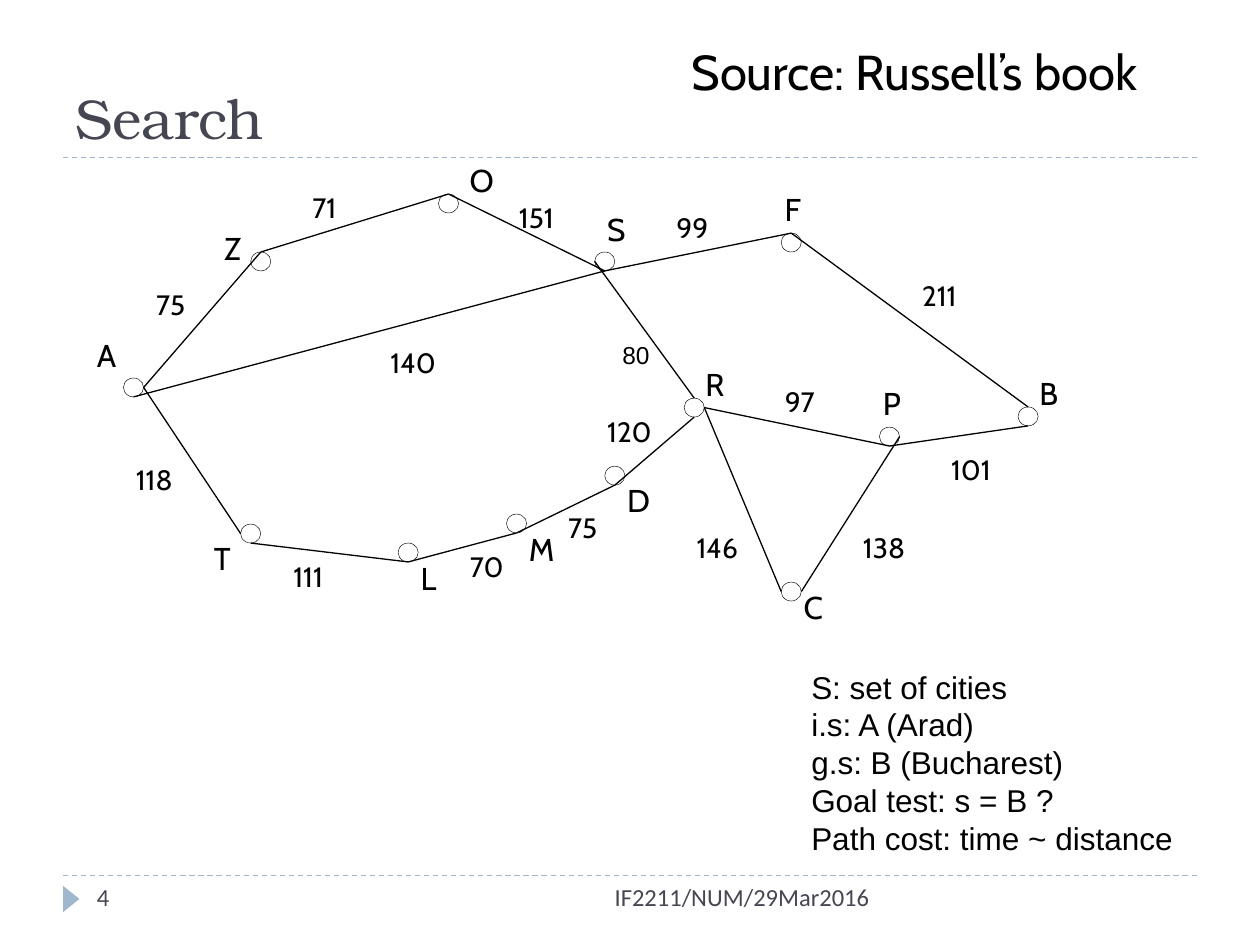
from typing import NamedTuple

import pptx
import pptx.dml.color
import pptx.enum.dml
import pptx.enum.shapes
import pptx.enum.text
import pptx.util
from lxml import etree

Inches = pptx.util.Inches
SHAPE = pptx.enum.shapes.MSO_SHAPE
ALIGN = pptx.enum.text.PP_ALIGN

COLORS = {"ink": "000000", "slate": "464653", "sky": "9FB8CD"}
DOT_W, DOT_H = 0.16, 0.15
# Points on a dot's rim, as shares of its width and height
SIDES = {"n": (0.5, 0), "e": (1, 0.5), "s": (0.5, 1), "w": (0, 0.5)}


class City(NamedTuple):
    x: float
    y: float
    text_x: float
    text_y: float


class Road(NamedTuple):
    start: str
    start_side: str
    end: str
    end_side: str
    cost: int
    text_x: float
    text_y: float


class Style(NamedTuple):
    font: str
    size: int
    color: str = "ink"


CITIES = {
    "A": City(0.98, 3.00, 0.67, 2.62),
    "T": City(1.91, 4.16, 1.60, 4.23),
    "R": City(5.43, 3.16, 5.50, 2.85),
    "C": City(6.20, 4.62, 6.28, 4.62),
    "P": City(6.98, 3.39, 6.91, 3.00),
    "B": City(8.08, 3.23, 8.15, 2.92),
    "F": City(6.20, 1.85, 6.13, 1.46),
    "S": City(4.72, 2.00, 4.72, 1.62),
    "O": City(3.48, 1.54, 3.63, 1.23),
    "Z": City(1.99, 2.00, 1.68, 1.77),
    "D": City(4.80, 3.70, 4.88, 3.77),
    "M": City(4.02, 4.08, 4.10, 4.16),
    "L": City(3.16, 4.31, 3.24, 4.39),
}

ROADS = [
    Road("A", "e", "Z", "n", 75, 1.14, 2.23),
    Road("Z", "n", "O", "n", 71, 2.38, 1.46),
    Road("O", "n", "S", "s", 151, 4.02, 1.54),
    Road("A", "s", "S", "s", 140, 3.00, 2.69),
    Road("P", "s", "B", "s", 101, 7.45, 3.54),
    Road("R", "e", "P", "s", 97, 6.13, 3.00),
    Road("C", "e", "P", "e", 138, 6.75, 4.16),
    Road("C", "w", "R", "e", 146, 5.43, 4.16),
    Road("D", "s", "R", "s", 120, 4.72, 3.24),
    Road("M", "s", "D", "s", 75, 4.41, 4.00),
    Road("L", "s", "M", "s", 70, 3.63, 4.31),
    Road("T", "w", "A", "e", 118, 0.98, 3.62),
    Road("T", "s", "L", "s", 111, 2.23, 4.39),
    Road("R", "n", "S", "w", 80, 4.84, 2.65),
    Road("S", "s", "F", "n", 99, 5.27, 1.62),
    Road("F", "n", "B", "n", 211, 7.22, 2.16),
]

NOTES = ["S: set of cities", "i.s: A (Arad)", "g.s: B (Bucharest)",
         "Goal test: s = B ?", "Path cost: time ~ distance"]

NAME = Style("Cabin", 18)
COST = Style("Cabin", 16)
SMALL = Style("Arial", 14)
FOOT = Style("Calibri", 14, "slate")


def rgb(name: str) -> pptx.dml.color.RGBColor:
    return pptx.dml.color.RGBColor.from_string(COLORS[name])


def write(frame, lines: list[str], style: Style, align=ALIGN.LEFT) -> None:
    frame.text = "\n".join(lines)
    for para in frame.paragraphs:
        para.alignment = align
        para.font.name = style.font
        para.font.size = pptx.util.Pt(style.size)
        para.font.color.rgb = rgb(style.color)


def add_text(slide, box: tuple, lines: list[str], style: Style,
             align=ALIGN.LEFT, wrap: bool = True) -> None:
    frame = slide.shapes.add_textbox(*map(Inches, box)).text_frame
    frame.word_wrap = wrap
    write(frame, lines, style, align)


def add_line(slide, start: tuple, end: tuple, color: str, dash: bool = False) -> None:
    line = slide.shapes.add_connector(
        pptx.enum.shapes.MSO_CONNECTOR.STRAIGHT, *map(Inches, (*start, *end)))
    line.line.color.rgb = rgb(color)
    line.line.width = pptx.util.Pt(0.75)
    if dash:
        line.line.dash_style = pptx.enum.dml.MSO_LINE.DASH
    etree.SubElement(line._element.spPr, pptx.oxml.ns.qn("a:effectLst"))


def add_dot(slide, city: City) -> None:
    dot = slide.shapes.add_shape(
        SHAPE.OVAL, *map(Inches, (city.x, city.y, DOT_W, DOT_H)))
    dot.shadow.inherit = False
    dot.fill.background()
    dot.line.color.rgb = rgb("ink")
    dot.line.width = pptx.util.Pt(0.25)


def rim(name: str, side: str) -> tuple[float, float]:
    across, down = SIDES[side]
    city = CITIES[name]
    return city.x + across * DOT_W, city.y + down * DOT_H


def add_frame(slide) -> None:
    # Rules and page marker
    for y in (6.95, 1.25):
        add_line(slide, (0.5, y), (9.5, y), "sky", dash=True)
    mark = slide.shapes.add_shape(
        SHAPE.ISOSCELES_TRIANGLE, *map(Inches, (0.46, 7.07, 0.21, 0.13)))
    mark.rotation = 90
    mark.shadow.inherit = False
    mark.fill.solid()
    mark.fill.fore_color.rgb = rgb("sky")
    mark.line.fill.background()

    # Page number and footer
    add_text(slide, (0.67, 6.95, 2.17, 0.4), ["4"], FOOT)
    add_text(slide, (3.17, 6.95, 3.83, 0.4), ["IF2211/NUM/29Mar2016"],
             FOOT, ALIGN.RIGHT)

    # Title
    title = slide.shapes.title
    title.left, title.top, title.width, title.height = map(
        Inches, (0.5, 0.17, 9, 1.08))
    title.text_frame.auto_size = pptx.enum.text.MSO_AUTO_SIZE.NONE
    title.text_frame.vertical_anchor = pptx.enum.text.MSO_ANCHOR.BOTTOM
    write(title.text_frame, ["Search"], Style("TeX Gyre Bonum", 32, "slate"))


def add_map(slide) -> None:
    for city in CITIES.values():
        add_dot(slide, city)
    for road in ROADS:
        add_line(slide, rim(road.start, road.start_side),
                 rim(road.end, road.end_side), "ink")
    for name, city in CITIES.items():
        add_text(slide, (city.text_x, city.text_y, 0.47, 0.4), [name], NAME)
    for road in ROADS:
        small = road.cost == 80
        size = (0.42, 0.33) if small else (0.62, 0.37)
        add_text(slide, (road.text_x, road.text_y, *size), [str(road.cost)],
                 SMALL if small else COST, wrap=not small)


def main() -> None:
    deck = pptx.Presentation()
    deck.slide_width, deck.slide_height = Inches(10), Inches(7.5)
    slide = deck.slides.add_slide(deck.slide_layouts[5])
    add_frame(slide)
    # Source and problem statement
    add_text(slide, (5.39, 0.28, 4.07, 0.57), ["Source: Russell’s book"],
             Style("Cabin", 28))
    add_text(slide, (6.34, 5.25, 3.29, 1.6), NOTES, Style("Arial", 18))
    add_map(slide)
    deck.save("out.pptx")


if __name__ == "__main__":
    main()
